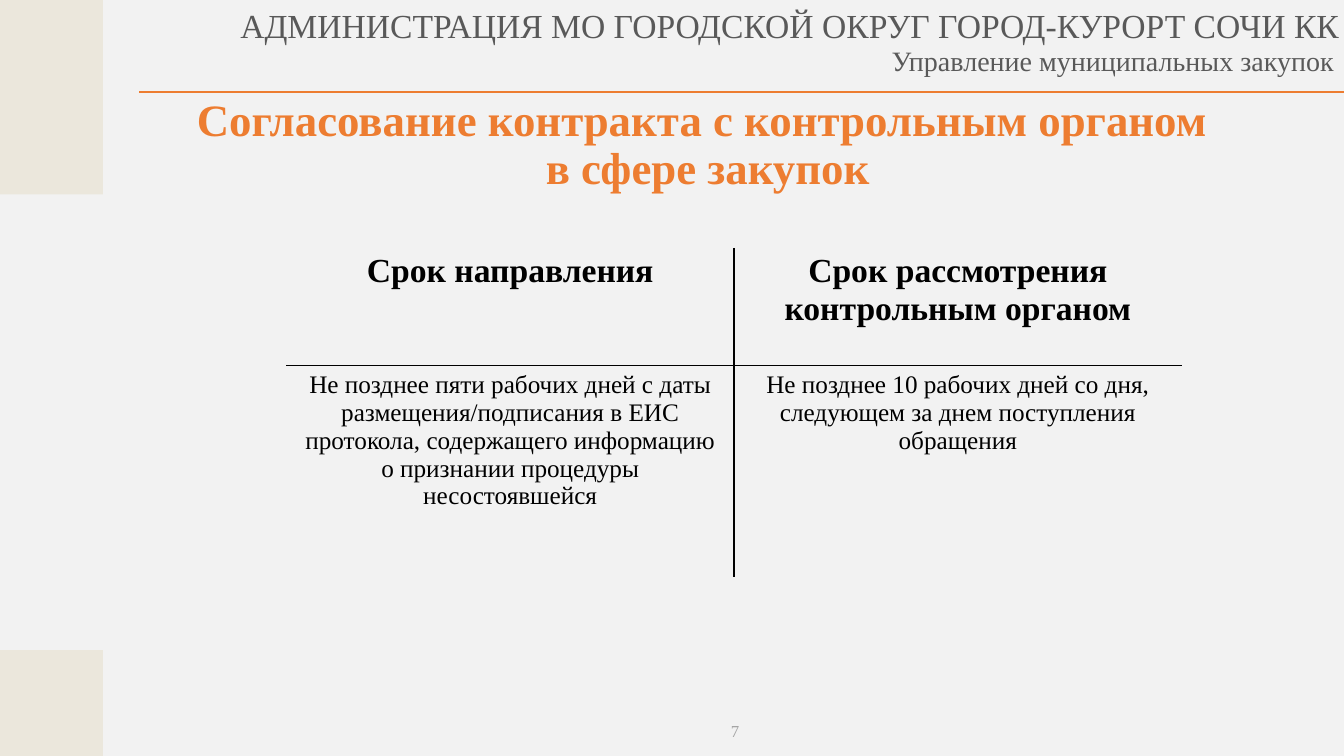
from pptx import Presentation
from pptx.util import Inches, Pt
from pptx.dml.color import RGBColor
from pptx.enum.shapes import MSO_CONNECTOR, MSO_SHAPE
from pptx.enum.text import MSO_ANCHOR, MSO_AUTO_SIZE, PP_ALIGN
from pptx.oxml import parse_xml
from pptx.oxml.ns import nsdecls, qn
from lxml.etree import SubElement

COLORS = {
    "background": "F2F2F2",
    "side": "EBE7DC",
    "accent": "ED7D31",
    "header": "595959",
    "text": "000000",
    "number": "A5A5A5",
}
FONT = "Times New Roman"
NO_STYLE = "{2D5ABB26-0587-4C30-8999-92F81FD0307C}"


def rgb(name):
    return RGBColor.from_string(COLORS[name])


def add_run(p, text, size, color, bold=False):
    r = p.add_run()
    r.text = text
    r.font.name = FONT
    r.font.size = Pt(size)
    r.font.bold = bold
    r.font.color.rgb = rgb(color)


prs = Presentation()
prs.slide_width, prs.slide_height = Inches(13.33), Inches(7.5)
s = prs.slides.add_slide(prs.slide_layouts[5])
s.background.fill.solid()
s.background.fill.fore_color.rgb = rgb("background")

# Side blocks
for top, height in [(0, 1.93), (6.45, 1.05)]:
    sp = s.shapes.add_shape(MSO_SHAPE.RECTANGLE, 0, Inches(top), Inches(1.02), Inches(height))
    sp.shadow.inherit = False
    sp.fill.solid()
    sp.fill.fore_color.rgb = rgb("side")
    sp.line.fill.background()

# Header rule
rule = s.shapes.add_connector(
    MSO_CONNECTOR.STRAIGHT, Inches(1.38), Inches(0.91), Inches(13.33), Inches(0.91))
rule.line.color.rgb = rgb("accent")
rule.line.width = Pt(1.5)
SubElement(rule._element.spPr, qn("a:effectLst"))

# Header lines and slide number
labels = [
    ("АДМИНИСТРАЦИЯ МО ГОРОДСКОЙ ОКРУГ ГОРОД-КУРОРТ СОЧИ КК",
     (2.13, 0, 11.25, 0.5), 24, "header", PP_ALIGN.RIGHT, 1.0),
    ("Управление муниципальных закупок",
     (1.38, 0.42, 11.95, 0.46), 20, "header", PP_ALIGN.RIGHT, 0.9),
    ("7", (5.79, 7.1, 3, 0.4), 12, "number", PP_ALIGN.CENTER, 1.0),
]
for text, box, size, color, align, spacing in labels:
    tf = s.shapes.add_textbox(*[Inches(v) for v in box]).text_frame
    tf.word_wrap = True
    p = tf.paragraphs[0]
    p.alignment = align
    p.line_spacing = spacing
    add_run(p, text, size, color)

# Title
title = s.shapes.title
title.left, title.top = Inches(1.14), Inches(0.82)
title.width, title.height = Inches(11.76), Inches(1.26)
tf = title.text_frame
tf.word_wrap = True
tf.auto_size = MSO_AUTO_SIZE.NONE
tf.vertical_anchor = MSO_ANCHOR.MIDDLE
p = tf.paragraphs[0]
p.alignment = PP_ALIGN.CENTER
p.line_spacing = 0.9
add_run(p, "Согласование контракта с контрольным органом ", 32, "accent", True)
p.add_line_break()
add_run(p, "в сфере закупок", 32, "accent", True)

# Table of deadlines
rows = [
    ["Срок направления", "Срок рассмотрения контрольным органом"],
    ["Не позднее пяти рабочих дней с даты размещения/подписания в ЕИС протокола, "
     "содержащего информацию о признании процедуры несостоявшейся",
     "Не позднее 10 рабочих дней со дня, следующем за днем поступления обращения"],
]
table = s.shapes.add_table(
    2, 2, Inches(2.84), Inches(2.46), Inches(8.88), Inches(3.26)).table
table.first_row = table.horz_banding = False
table._tbl.tblPr.find(qn("a:tableStyleId")).text = NO_STYLE
for col in table.columns:
    col.width = Inches(4.44)
for row, height in zip(table.rows, [1.17, 2.09]):
    row.height = Inches(height)

for i, texts in enumerate(rows):
    for j, text in enumerate(texts):
        cell = table.cell(i, j)
        cell.fill.background()
        p = cell.text_frame.paragraphs[0]
        p.alignment = PP_ALIGN.CENTER
        add_run(p, text, 18 if i else 24, "text", bold=i == 0)
        # Only the inner edges carry a line
        edges = ["lnL" if j else "lnR", "lnT" if i else "lnB"]
        for n, edge in enumerate(edges):
            cell._tc.get_or_add_tcPr().insert(n, parse_xml(
                f'<a:{edge} {nsdecls("a")} w="{Pt(1)}"><a:solidFill>'
                f'<a:srgbClr val="{COLORS["text"]}"/></a:solidFill></a:{edge}>'))

prs.save("out.pptx")
